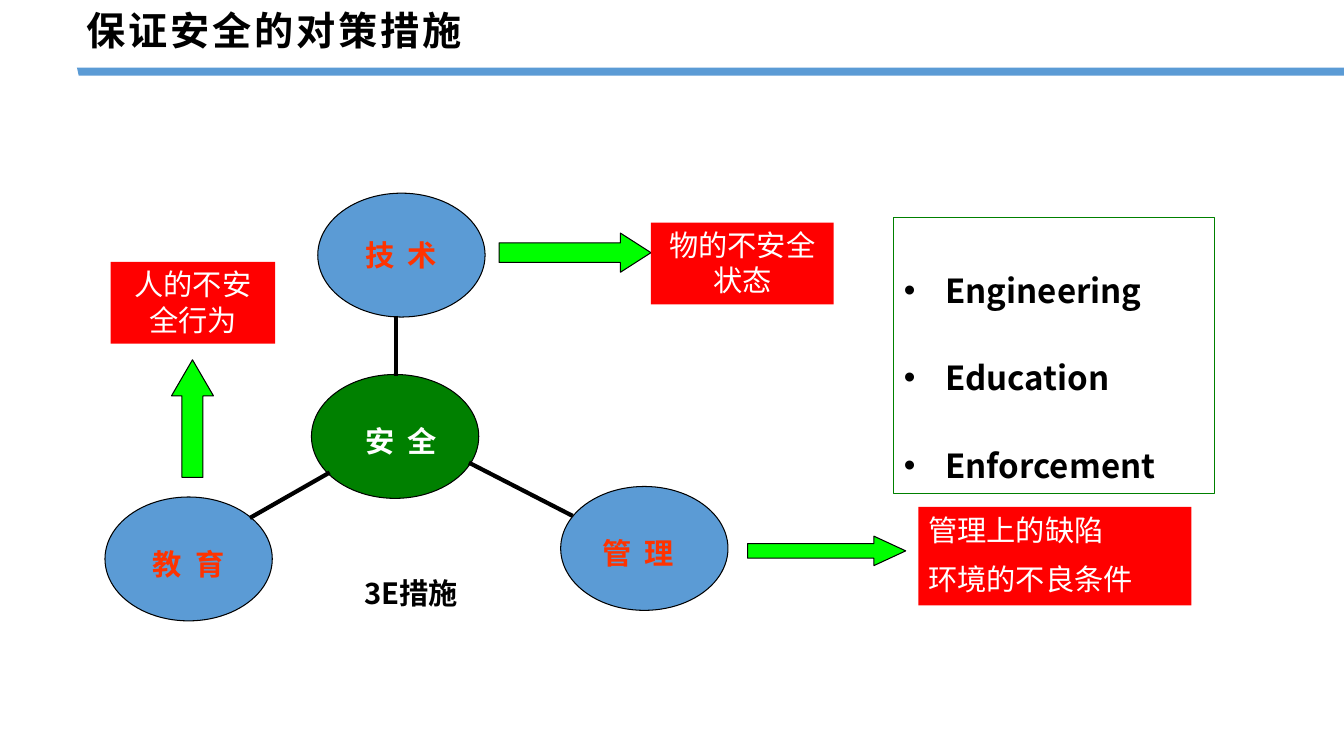
from dataclasses import dataclass
from typing import NamedTuple

from lxml.etree import SubElement
from pptx import Presentation
from pptx.dml.color import RGBColor as RGB
from pptx.enum.shapes import MSO_CONNECTOR as CONNECTOR, MSO_SHAPE as SHAPE
from pptx.enum.text import MSO_ANCHOR as ANCHOR, MSO_AUTO_SIZE as AUTO_SIZE, PP_ALIGN as ALIGN
from pptx.oxml.ns import qn
from pptx.util import Pt


@dataclass(frozen=True)
class Theme:
    black: RGB = RGB(0x00, 0x00, 0x00)
    white: RGB = RGB(0xFF, 0xFF, 0xFF)
    blue: RGB = RGB(0x5B, 0x9B, 0xD5)
    green: RGB = RGB(0x00, 0x80, 0x00)
    lime: RGB = RGB(0x00, 0xFF, 0x00)
    red: RGB = RGB(0xFF, 0x00, 0x00)
    orange: RGB = RGB(0xFF, 0x33, 0x00)
    title_font: str = "Arial"
    font: str = "Noto Sans CJK SC"
    title_size: float = 28
    list_size: float = 23.6
    text_size: float = 20.9
    thin: float = 0.75
    thick: float = 3


THEME = Theme()


class Box(NamedTuple):
    left: float
    top: float
    width: float
    height: float

    def inner(self, left, top, width, height):
        return Box(self.left + left, self.top + top, width, height)

    def points(self):
        return [Pt(length) for length in self]


def apply(target, values):
    for name, value in values.items():
        setattr(target, name, value)


def move(placeholder, box):
    apply(placeholder, dict(zip(("left", "top", "width", "height"), box.points())))


def write(frame, lines, color, size=THEME.text_size, bold=True, font=THEME.font,
          align=ALIGN.LEFT, anchor=ANCHOR.TOP, gap=0, line_spacing=1.0, tracking=0, bullet_indent=0):
    apply(frame, {"word_wrap": True, "auto_size": AUTO_SIZE.NONE, "vertical_anchor": anchor})
    for index, line in enumerate(lines):
        paragraph = frame.paragraphs[0] if index == 0 else frame.add_paragraph()
        apply(paragraph, {"alignment": align, "line_spacing": line_spacing,
                          "space_before": Pt(gap if index else 0)})
        if bullet_indent:
            properties = paragraph._p.get_or_add_pPr()
            properties.set("marL", str(Pt(bullet_indent)))
            properties.set("indent", str(-Pt(bullet_indent)))
            SubElement(properties, qn("a:buChar"), char="•")
        run = paragraph.add_run()
        run.text = line
        apply(run.font, {"name": font, "size": Pt(size), "bold": bold})
        run.font.color.rgb = color
        run_properties = run._r.get_or_add_rPr()
        SubElement(run_properties, qn("a:ea"), typeface=THEME.font)
        if tracking:
            run_properties.set("spc", str(round(tracking * 100)))


def paint(shape, fill, outline=None):
    shape.shadow.inherit = False
    shape.fill.solid()
    shape.fill.fore_color.rgb = fill
    if outline is None:
        shape.line.fill.background()
    else:
        shape.line.color.rgb = outline
        shape.line.width = Pt(THEME.thin)


def add_figure(slide, kind, box, fill, outline=None):
    figure = slide.shapes.add_shape(kind, *box.points())
    paint(figure, fill, outline)
    return figure


def add_label(slide, box, text, color, **style):
    label = slide.shapes.add_textbox(*box.points())
    write(label.text_frame, [text], color, **style)


# Heading and the rule below it
def draw_heading(slide, box):
    title = slide.shapes.title
    move(title, box.inner(2, 0.5, 516, 41))
    apply(title.text_frame, {"margin_left": Pt(5), "margin_right": Pt(5),
                             "margin_top": Pt(2), "margin_bottom": Pt(2)})
    write(title.text_frame, ["保证安全的对策措施"], THEME.black, size=THEME.title_size,
          font=THEME.title_font, anchor=ANCHOR.MIDDLE, tracking=2)
    right, bottom = box.left + box.width, box.top + box.height
    outline = slide.shapes.build_freeform(Pt(box.left), Pt(bottom - 5.75))
    corners = [(right, bottom - 5.75), (right, bottom), (box.left + 1.25, bottom)]
    outline.add_line_segments([(Pt(x), Pt(y)) for x, y in corners])
    paint(outline.convert_to_shape(), THEME.blue)


# Hub with three measures around it
def draw_measures(slide, box):
    # text, node left and top, label shift right and down, node fill, text colour
    nodes = [
        ("安 全", 147.5, 129.5, 4.5, 31, THEME.green, THEME.white),
        ("教 育", 0, 217, 0, 31.5, THEME.blue, THEME.orange),
        ("技 术", 152, 0, 0, 28, THEME.blue, THEME.orange),
        ("管 理", 325.5, 209.5, -4.5, 31.5, THEME.blue, THEME.orange),
    ]
    for text, left, top, right_shift, down_shift, fill, color in nodes:
        node = box.inner(left, top, 119.5, 88.5)
        add_figure(slide, SHAPE.OVAL, node, fill, THEME.black)
        add_label(slide, node.inner(right_shift, down_shift, 119.5, 32.5), text, color,
                  align=ALIGN.CENTER, tracking=2.35)
    spokes = [(208, 87.5, 208, 130.5), (160.5, 199.5, 103.5, 232), (260, 192.5, 334, 230.5)]
    for x1, y1, x2, y2 in spokes:
        spoke = slide.shapes.add_connector(
            CONNECTOR.STRAIGHT, Pt(box.left + x1), Pt(box.top + y1),
            Pt(box.left + x2), Pt(box.top + y2))
        spoke.line.color.rgb = THEME.black
        spoke.line.width = Pt(THEME.thick)
        SubElement(spoke._element.spPr, qn("a:effectLst"))
    add_label(slide, box.inner(178, 269.5, 95, 32.5), "3E措施", THEME.black)


# The three E words
def draw_three_e(slide, box):
    words = slide.placeholders[1]
    move(words, box)
    words.line.color.rgb = THEME.green
    words.line.width = Pt(THEME.thin)
    write(words.text_frame, ["Engineering", "Education", "Enforcement"], THEME.black,
          size=THEME.list_size, line_spacing=2.2, bullet_indent=29.5)


# Arrow pointing to the hazard that a measure answers
def draw_hazard(slide, box, arrow_kind, arrow_box, head, panel_box, lines, align=ALIGN.CENTER):
    arrow = add_figure(slide, arrow_kind, box.inner(*arrow_box), THEME.lime, THEME.black)
    arrow.adjustments[1] = head
    panel = add_figure(slide, SHAPE.RECTANGLE, box.inner(*panel_box), THEME.red)
    write(panel.text_frame, lines, THEME.white, bold=False, align=align, gap=10.5)


def main():
    deck = Presentation()
    apply(deck, {"slide_width": Pt(960), "slide_height": Pt(540)})
    slide = deck.slides.add_slide(deck.slide_layouts[1])

    draw_heading(slide, Box(55, 0, 905, 54))
    draw_measures(slide, Box(75, 138, 445, 306))
    draw_three_e(slide, Box(638.5, 155.5, 229, 197))
    draw_hazard(slide, Box(356.5, 159, 239, 58.5), SHAPE.RIGHT_ARROW, (0, 7.5, 108.5, 28), 0.78,
                (108.5, 0, 130.5, 58.5), ["物的不安全状态"])
    draw_hazard(slide, Box(79, 187, 117.5, 154), SHAPE.UP_ARROW, (43.5, 70, 30, 84), 0.86,
                (0, 0, 117.5, 58.5), ["人的不安全行为"])
    draw_hazard(slide, Box(534, 362, 317, 70.5), SHAPE.RIGHT_ARROW, (0, 21, 113, 21), 1.08,
                (122, 0, 195, 70.5), ["管理上的缺陷", "环境的不良条件"], ALIGN.LEFT)

    deck.save("out.pptx")


if __name__ == "__main__":
    main()
